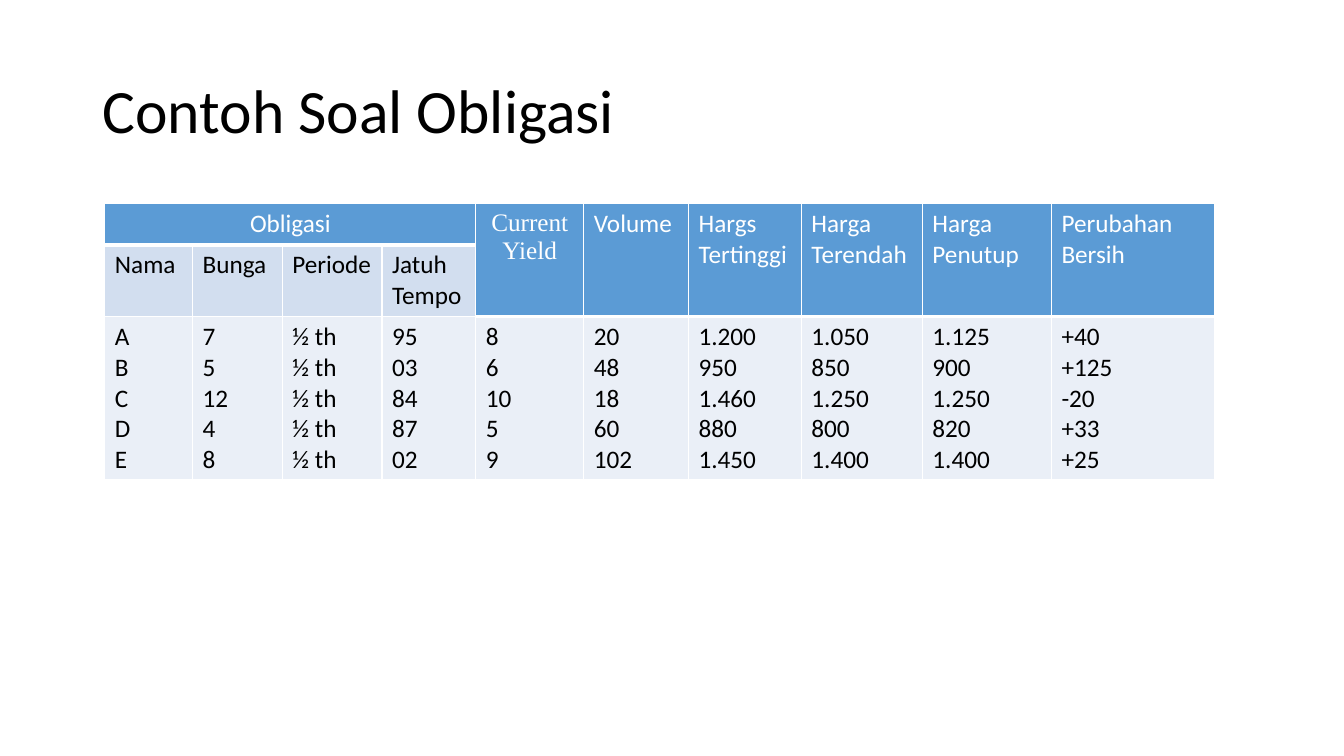
import pptx
import pptx.util
import pptx.dml.color
import pptx.enum.text
import pptx.oxml.ns
from lxml import etree

Inches, Pt = pptx.util.Inches, pptx.util.Pt
RGB = pptx.dml.color.RGBColor.from_string
ALIGN = pptx.enum.text.PP_ALIGN
COLORS = {"head": "5B9BD5", "sub": "D2DEEF", "body": "EAEFF7",
          "white": "FFFFFF", "black": "000000"}
WIDTHS = [0.87, 0.89, 0.99, 0.93, 1.07, 1.04, 1.12, 1.2, 1.28, 1.62]
HEIGHTS = [0.41, 0.71, 1.62]
GROUP = 4
SUBS = ["Nama", "Bunga", "Periode", "Jatuh Tempo"]
HEADS = ["Current Yield", "Volume", "Hargs Tertinggi", "Harga Terendah",
         "Harga Penutup", "Perubahan Bersih"]
BONDS = [
    ["A", "7", "½ th", "95", "8", "20", "1.200", "1.050", "1.125", "+40"],
    ["B", "5", "½ th", "03", "6", "48", "950", "850", "900", "+125"],
    ["C", "12", "½ th", "84", "10", "18", "1.460", "1.250", "1.250", "-20"],
    ["D", "4", "½ th", "87", "5", "60", "880", "800", "820", "+33"],
    ["E", "8", "½ th", "02", "9", "102", "1.450", "1.400", "1.400", "+25"],
]


def write(frame, lines, color, size=18, face="Calibri", align=ALIGN.LEFT):
    """Fill a text frame with one paragraph per line."""
    frame.text = "\n".join(lines)
    for para in frame.paragraphs:
        para.alignment = align
        for run in para.runs:
            for name, value in {"size": Pt(size), "name": face}.items():
                setattr(run.font, name, value)
            run.font.color.rgb = RGB(COLORS[color])


def paint(cell, fill, base):
    """Give a cell white borders, the lower one base points wide, and a fill."""
    props = cell._tc.get_or_add_tcPr()
    for side, width in {"L": 1, "R": 1, "T": 1, "B": base}.items():
        line = etree.SubElement(props, pptx.oxml.ns.qn("a:ln" + side), w=str(Pt(width)))
        solid = etree.SubElement(line, pptx.oxml.ns.qn("a:solidFill"))
        etree.SubElement(solid, pptx.oxml.ns.qn("a:srgbClr"), val=COLORS["white"])
    cell.fill.solid()
    cell.fill.fore_color.rgb = RGB(COLORS[fill])


deck = pptx.Presentation()
deck.slide_width, deck.slide_height = Inches(13.33), Inches(7.5)
slide = deck.slides.add_slide(deck.slide_layouts[6])

title = slide.shapes.add_textbox(Inches(0.92), Inches(0.4), Inches(11.5), Inches(1.45))
frame = title.text_frame
frame.word_wrap = True
frame.vertical_anchor = pptx.enum.text.MSO_ANCHOR.MIDDLE
write(frame, ["Contoh Soal Obligasi"], "black", size=44)
frame.paragraphs[0].line_spacing = 0.9

table = slide.shapes.add_table(
    len(HEIGHTS), len(WIDTHS), Inches(1.04), Inches(2.02),
    Inches(sum(WIDTHS)), Inches(sum(HEIGHTS))).table
for col, width in zip(table.columns, WIDTHS):
    col.width = Inches(width)
for row, height in zip(table.rows, HEIGHTS):
    row.height = Inches(height)

for c in range(len(WIDTHS)):
    paint(table.cell(0, c), "head", 3)
    paint(table.cell(1, c), "sub" if c < GROUP else "head", 1 if c < GROUP else 3)
    paint(table.cell(2, c), "body", 1)

table.cell(0, 0).merge(table.cell(0, GROUP - 1))
write(table.cell(0, 0).text_frame, ["Obligasi"], "white", align=ALIGN.CENTER)
for c, text in enumerate(SUBS):
    write(table.cell(1, c).text_frame, [text], "black")
for c, text in enumerate(HEADS, GROUP):
    table.cell(0, c).merge(table.cell(1, c))
    style = {"face": "Times New Roman", "align": ALIGN.CENTER} if c == GROUP else {}
    write(table.cell(0, c).text_frame, [text], "white", **style)
for c, values in enumerate(zip(*BONDS)):
    write(table.cell(2, c).text_frame, values, "black")

deck.save("out.pptx")
